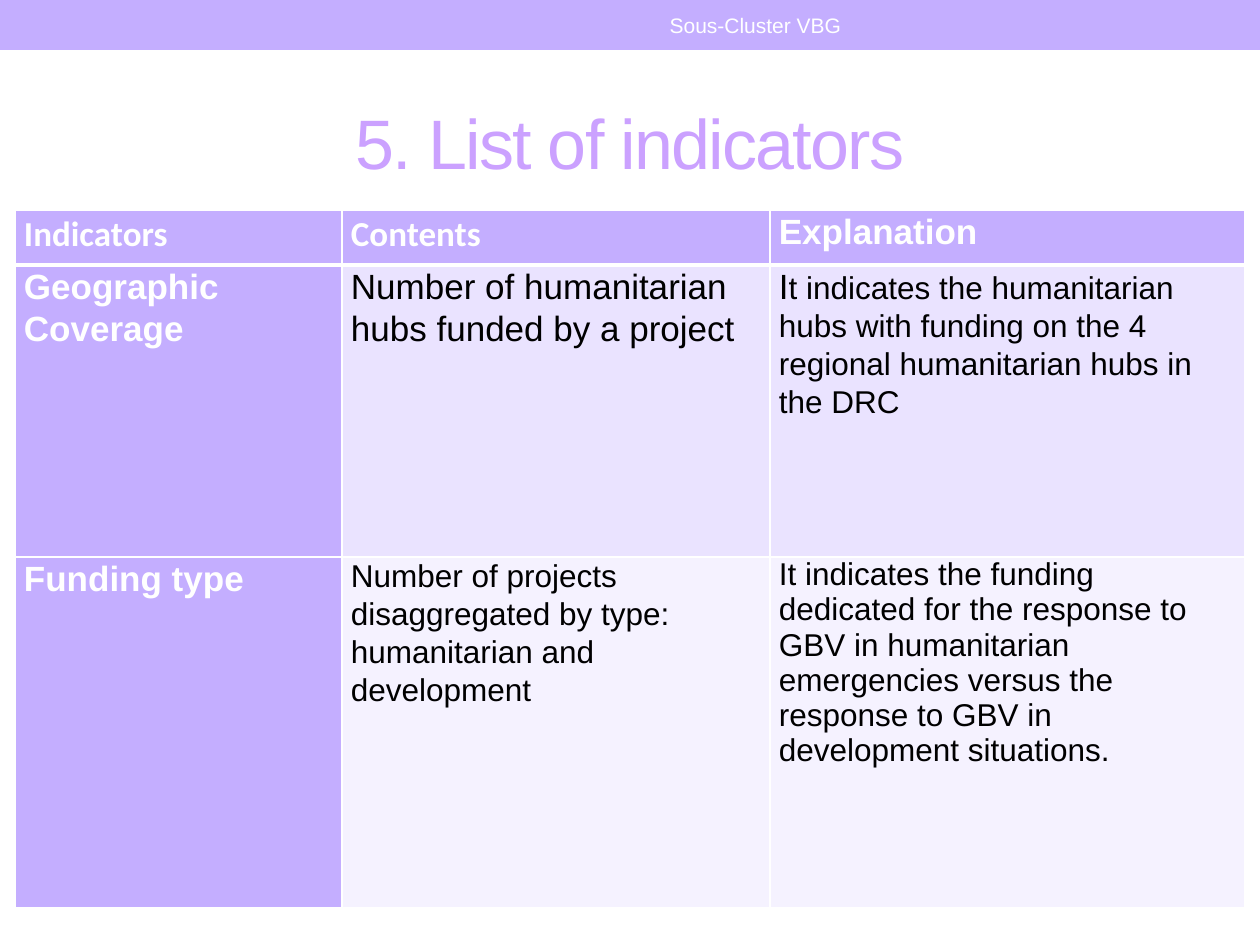
import pptx
import pptx.dml.color
import pptx.enum.shapes
import pptx.enum.text
import pptx.oxml
import pptx.oxml.ns
import pptx.util

RGB = pptx.dml.color.RGBColor
LILAC = RGB(0xC4, 0xAE, 0xFF)
TITLE = RGB(0xCB, 0xA1, 0xFF)
BAND_DARK = RGB(0xEA, 0xE3, 0xFF)
BAND_LIGHT = RGB(0xF5, 0xF2, 0xFF)
WHITE = RGB(0xFF, 0xFF, 0xFF)
BLACK = RGB(0, 0, 0)


class Deck:
    PX = 914400 // 126
    FONT = "Arial"

    def __init__(self, width, height):
        self.prs = pptx.Presentation()
        self.prs.slide_width = self.px(width)
        self.prs.slide_height = self.px(height)
        self.s = self.prs.slides.add_slide(self.prs.slide_layouts[6])

    def px(self, n):
        return pptx.util.Emu(n * self.PX)

    def box(self, *lengths):
        return [self.px(n) for n in lengths]

    def style(self, p, size, color, bold=False, font=FONT):
        p.font.name = font
        p.font.size = pptx.util.Pt(size)
        p.font.bold = bold
        p.font.color.rgb = color

    def bar(self, x, y, w, h, color):
        sp = self.s.shapes.add_shape(
            pptx.enum.shapes.MSO_SHAPE.RECTANGLE, *self.box(x, y, w, h))
        sp.shadow.inherit = False
        sp.fill.solid()
        sp.fill.fore_color.rgb = color
        sp.line.fill.background()

    def text(self, x, y, w, h, text, size, color, spacing=0):
        tf = self.s.shapes.add_textbox(*self.box(x, y, w, h)).text_frame
        tf.word_wrap = True
        tf.vertical_anchor = pptx.enum.text.MSO_ANCHOR.MIDDLE
        p = tf.paragraphs[0]
        p.alignment = pptx.enum.text.PP_ALIGN.CENTER
        self.style(p, size, color)
        r = p.add_run()
        r.text = text
        if spacing:
            r.font._element.set("spc", str(spacing * 100))

    def table(self, x, y, widths, heights):
        table = self.s.shapes.add_table(
            len(heights), len(widths),
            *self.box(x, y, sum(widths), sum(heights))).table
        table.first_row = table.horz_banding = False
        for column, width in zip(table.columns, widths):
            column.width = self.px(width)
        for row, height in zip(table.rows, heights):
            row.height = self.px(height)
        return table

    def borders(self, cell, top, bottom):
        tcPr = cell._tc.get_or_add_tcPr()
        for i, (side, pt) in enumerate(
                (("L", 1), ("R", 1), ("T", top), ("B", bottom))):
            tcPr.insert(i, pptx.oxml.parse_xml(
                f'<a:ln{side} {pptx.oxml.ns.nsdecls("a")} w="{pt * 12700}">'
                f'<a:solidFill><a:srgbClr val="{WHITE}"/></a:solidFill>'
                f'</a:ln{side}>'))

    def cell(self, cell, runs, fill, size, color, bold, font=FONT, leading=1.07):
        cell.fill.solid()
        cell.fill.fore_color.rgb = fill
        cell.margin_left = cell.margin_right = self.px(9)
        cell.margin_top = cell.margin_bottom = 0
        p = cell.text_frame.paragraphs[0]
        p.line_spacing = leading
        self.style(p, size, color, bold, font)
        for text, run_size in runs:
            r = p.add_run()
            r.text = text
            if run_size != size:
                r.font.size = pptx.util.Pt(run_size)


def main():
    deck = Deck(1260, 945)
    deck.bar(0, 0, 1260, 50, LILAC)
    deck.text(63, 73, 1134, 136, "5. List of indicators", 40, TITLE, spacing=-1)
    deck.text(472, 3, 567, 45, "Sous-Cluster VBG", 12, WHITE)

    headers = [("Indicators", "Calibri"), ("Contents", "Calibri"),
               ("Explanation", "Arial")]
    indicators = [
        ("Geographic Coverage", BAND_DARK, [
            ([("Number of humanitarian hubs funded by a project", 20)], 20, 1.07),
            ([("I", 20), ("t indicates the humanitarian hubs with funding on "
                          "the 4 regional humanitarian hubs in the DRC", 18)],
             18, 1.07)]),
        ("Funding type", BAND_LIGHT, [
            ([("Number of projects disaggregated by type: humanitarian and "
               "development", 18)], 18, 1.07),
            ([("It indicates the funding dedicated for the response to GBV in "
               "humanitarian emergencies versus the response to GBV in "
               "development situations.", 18)], 18, 1.0)]),
    ]

    table = deck.table(15, 210, [327, 428, 475], [55, 292, 351])
    for c, (header, font) in enumerate(headers):
        deck.cell(table.cell(0, c), [(header, 20)], LILAC, 20, WHITE, True, font)
    for r, (name, band, details) in enumerate(indicators, 1):
        deck.cell(table.cell(r, 0), [(name, 20)], LILAC, 20, WHITE, True)
        for c, (runs, size, leading) in enumerate(details, 1):
            deck.cell(table.cell(r, c), runs, band, size, BLACK, False,
                      leading=leading)
    for r, (top, bottom) in enumerate([(1, 3), (3, 1), (1, 1)]):
        for c in range(len(headers)):
            deck.borders(table.cell(r, c), top, bottom)

    deck.prs.save("out.pptx")


if __name__ == "__main__":
    main()
